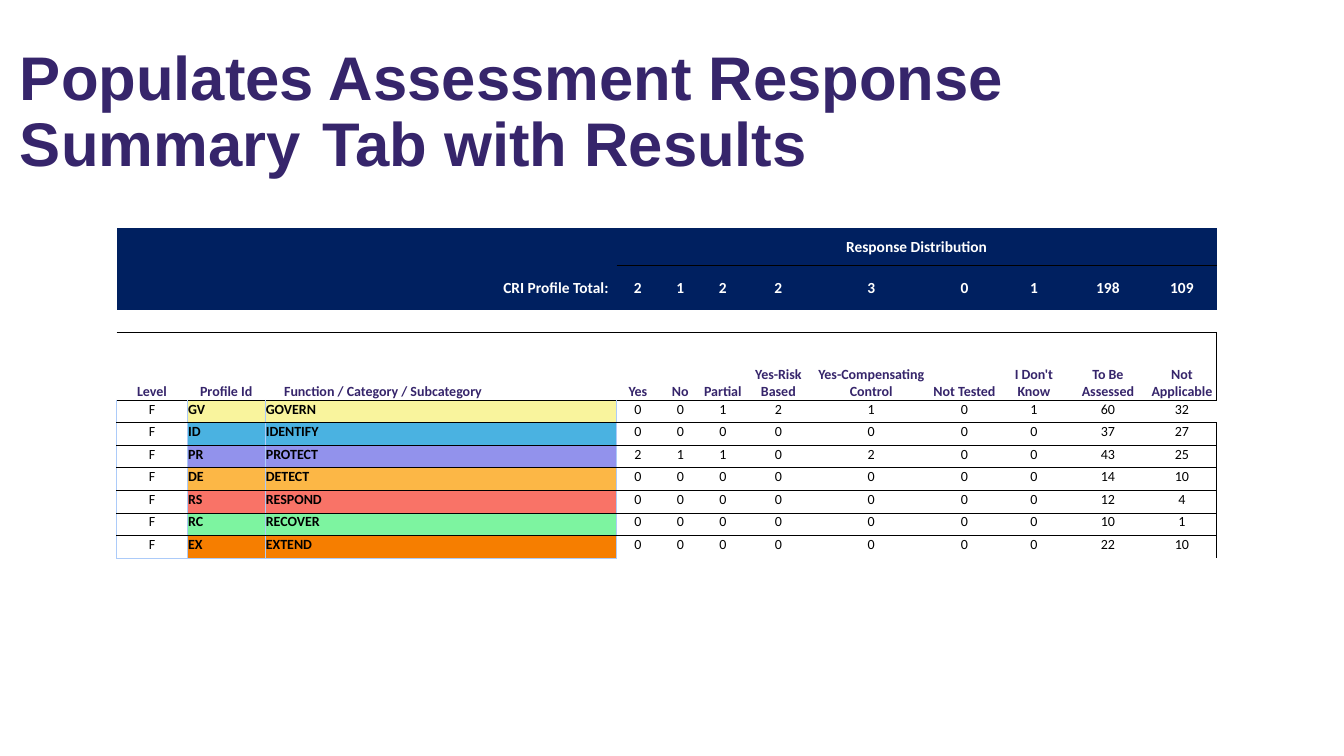
from dataclasses import dataclass, field

from lxml.etree import SubElement
from pptx import Presentation
from pptx.dml.color import RGBColor
from pptx.enum.text import MSO_ANCHOR as Anchor, MSO_AUTO_SIZE as AutoSize, PP_ALIGN as Align
from pptx.oxml.ns import qn
from pptx.table import Table, _Cell as Cell
from pptx.util import Cm, Pt

PURPLE, NAVY, WHITE, BLACK, PALE_BLUE = "36256B", "002060", "FFFFFF", "000000", "ACCBF9"
NO_STYLE = "{2D5ABB26-0587-4C30-8999-92F81FD0307C}"
COLUMN_WIDTHS = [1.78, 1.96, 8.86, 1.07, 1.07, 1.07, 1.73, 2.95, 1.75, 1.75, 1.98, 1.75]
TOP_ROW_HEIGHTS = [0.96, 1.12, 0.55, 1.71]
FUNCTION_ROW_HEIGHT = 0.57
HEADER_ROW = len(TOP_ROW_HEIGHTS) - 1
FIRST_COUNT, LAST = 3, len(COLUMN_WIDTHS) - 1
HEADERS = ["Level", "Profile Id", "Function / Category / Subcategory", "Yes", "No", "Partial",
           "Yes-Risk Based", "Yes-Compensating Control", "Not Tested", "I Don't Know",
           "To Be Assessed", "Not Applicable"]
TOTALS = [2, 1, 2, 2, 3, 0, 1, 198, 109]


@dataclass
class ProfileFunction:
    profile_id: str
    name: str
    color: str
    counts: list[int]


@dataclass
class CellLook:
    size: int = 10
    color: str = BLACK
    bold: bool = True
    align: Align = Align.CENTER
    anchor: Anchor = Anchor.TOP
    fill: str = ""
    left: float = 0.02
    right: float = 0.02
    borders: dict[str, str] = field(default_factory=dict)
    border_width: float = 0.5


FUNCTIONS = [
    ProfileFunction("GV", "GOVERN", "F9F49D", [0, 0, 1, 2, 1, 0, 1, 60, 32]),
    ProfileFunction("ID", "IDENTIFY", "4AB2E1", [0, 0, 0, 0, 0, 0, 0, 37, 27]),
    ProfileFunction("PR", "PROTECT", "9292EC", [2, 1, 1, 0, 2, 0, 0, 43, 25]),
    ProfileFunction("DE", "DETECT", "FCB746", [0, 0, 0, 0, 0, 0, 0, 14, 10]),
    ProfileFunction("RS", "RESPOND", "F97367", [0, 0, 0, 0, 0, 0, 0, 12, 4]),
    ProfileFunction("RC", "RECOVER", "7DF4A0", [0, 0, 0, 0, 0, 0, 0, 10, 1]),
    ProfileFunction("EX", "EXTEND", "F67E00", [0, 0, 0, 0, 0, 0, 0, 22, 10]),
]


def rgb(value: str) -> RGBColor:
    return RGBColor.from_string(value)


def draw_borders(cell: Cell, look: CellLook) -> None:
    properties = cell._tc.get_or_add_tcPr()
    for position, side in enumerate("LRTB"):
        line = properties.makeelement(qn(f"a:ln{side}"), {"w": str(Pt(look.border_width))})
        if side in look.borders:
            solid = SubElement(line, qn("a:solidFill"))
            SubElement(solid, qn("a:srgbClr"), val=look.borders[side])
        else:
            SubElement(line, qn("a:noFill"))
        properties.insert(position, line)


def write_cell(cell: Cell, text: str, look: CellLook) -> None:
    cell.text = text
    cell.vertical_anchor = look.anchor
    cell.margin_left, cell.margin_right = Cm(look.left), Cm(look.right)
    cell.margin_top, cell.margin_bottom = Cm(0.02), Cm(0)
    if look.fill:
        cell.fill.solid()
        cell.fill.fore_color.rgb = rgb(look.fill)
    else:
        cell.fill.background()
    paragraph = cell.text_frame.paragraphs[0]
    paragraph.alignment = look.align
    font = paragraph.font
    font.name, font.size, font.bold = "Calibri", Pt(look.size), look.bold
    font.color.rgb = rgb(look.color)
    if not text:
        SubElement(paragraph._p, qn("a:endParaRPr"), sz=str(look.size * 100))
    draw_borders(cell, look)


def write_totals(table: Table) -> None:
    for column in range(LAST + 1):
        is_count = column >= FIRST_COUNT
        banner = CellLook(11, WHITE, anchor=Anchor.MIDDLE, fill=NAVY, border_width=1,
                          borders={"B": BLACK} if is_count else {})
        total = CellLook(11, WHITE, anchor=Anchor.MIDDLE, fill=NAVY, border_width=1,
                         borders={"T": BLACK} if is_count else {})
        text = str(TOTALS[column - FIRST_COUNT]) if is_count else ""
        if column == FIRST_COUNT - 1:
            text, total.align, total.right = "CRI Profile Total:", Align.RIGHT, 0.2
        write_cell(table.cell(0, column),
                   "Response Distribution" if column == FIRST_COUNT else "", banner)
        write_cell(table.cell(1, column), text, total)
        write_cell(table.cell(2, column), "", CellLook(borders={"B": BLACK}))
    table.cell(0, FIRST_COUNT).merge(table.cell(0, LAST))


def write_headers(table: Table) -> None:
    for column, header in enumerate(HEADERS):
        look = CellLook(color=PURPLE, anchor=Anchor.BOTTOM, borders={"T": BLACK, "B": BLACK})
        if column == FIRST_COUNT - 1:
            look.align, look.left = Align.LEFT, 0.48
        if column == LAST:
            look.borders["R"] = BLACK
        write_cell(table.cell(HEADER_ROW, column), header, look)


def write_function(table: Table, index: int, function: ProfileFunction) -> None:
    texts = ["F", function.profile_id, function.name, *map(str, function.counts)]
    is_last_row = index == len(FUNCTIONS) - 1
    for column, text in enumerate(texts):
        is_name = column in (1, 2)
        look = CellLook(bold=is_name, align=Align.LEFT if is_name else Align.CENTER,
                        fill=function.color if is_name else "", borders={"T": BLACK})
        if not is_last_row:
            look.borders["B"] = BLACK
        elif column < FIRST_COUNT:
            look.borders["B"] = PALE_BLUE
        if column <= FIRST_COUNT:
            look.borders["L"] = PALE_BLUE
        if column < FIRST_COUNT:
            look.borders["R"] = PALE_BLUE
        if column == LAST and index > 0:
            look.borders["R"] = BLACK
        write_cell(table.cell(HEADER_ROW + 1 + index, column), text, look)


def main() -> None:
    presentation = Presentation()
    presentation.slide_width, presentation.slide_height = Cm(33.87), Cm(19.05)
    slide = presentation.slides.add_slide(presentation.slide_layouts[5])

    title = slide.shapes.title
    title.left, title.top, title.width, title.height = Cm(0.25), Cm(1.02), Cm(29.21), Cm(3.68)
    frame = title.text_frame
    frame.text = "Populates Assessment Response Summary \tTab with Results"
    frame.word_wrap, frame.auto_size = True, AutoSize.NONE
    frame.vertical_anchor = Anchor.MIDDLE
    paragraph = frame.paragraphs[0]
    paragraph.alignment, paragraph.line_spacing = Align.LEFT, 0.9
    font = paragraph.font
    font.name, font.size, font.bold = "Arial", Pt(44), True
    font.color.rgb = rgb(PURPLE)

    row_heights = TOP_ROW_HEIGHTS + [FUNCTION_ROW_HEIGHT] * len(FUNCTIONS)
    table = slide.shapes.add_table(len(row_heights), len(COLUMN_WIDTHS), Cm(2.94), Cm(5.74),
                                   Cm(sum(COLUMN_WIDTHS)), Cm(sum(row_heights))).table
    table.first_row = table.horz_banding = False
    table._tbl.tblPr.find(qn("a:tableStyleId")).text = NO_STYLE
    for column, width in zip(table.columns, COLUMN_WIDTHS):
        column.width = Cm(width)
    for row, height in zip(table.rows, row_heights):
        row.height = Cm(height)

    write_totals(table)
    write_headers(table)
    for index, function in enumerate(FUNCTIONS):
        write_function(table, index, function)
    presentation.save("out.pptx")


if __name__ == "__main__":
    main()
